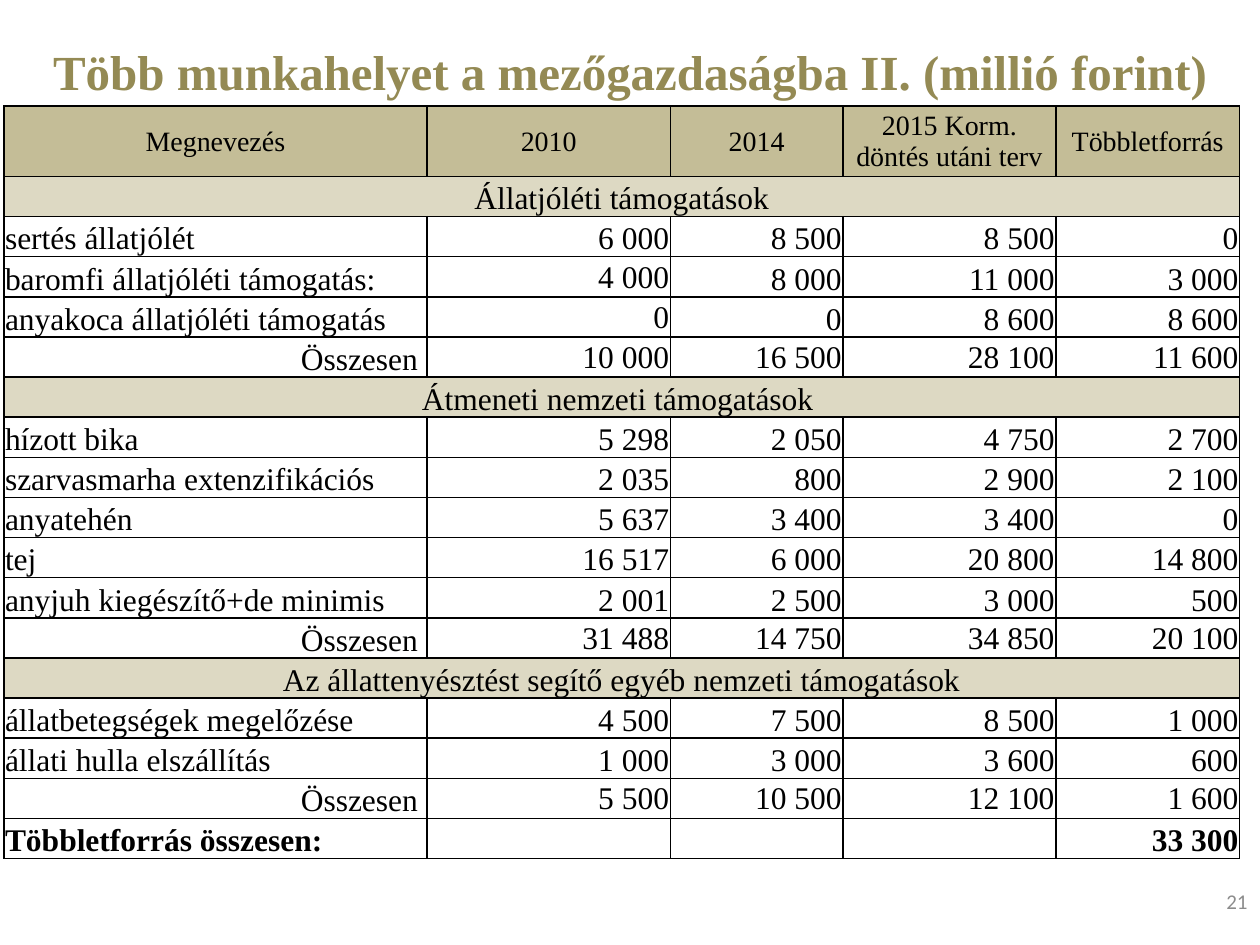
from lxml import etree
from pptx import Presentation
from pptx import util as u
from pptx.dml.color import RGBColor
from pptx.enum import text
from pptx.oxml.ns import qn

THEME = {
    "serif": "Times New Roman", "sans": "Calibri",
    "title": "948A54", "header": "C4BD97", "section": "DDD9C3",
    "ink": "000000", "muted": "8C8C8C",
    "title_size": 28, "header_size": 16, "body_size": 18, "number_size": 12,
    "border": 1,
}
LEFT, CENTER, RIGHT = text.PP_ALIGN.LEFT, text.PP_ALIGN.CENTER, text.PP_ALIGN.RIGHT
MIDDLE, BOTTOM = text.MSO_ANCHOR.MIDDLE, text.MSO_ANCHOR.BOTTOM

TITLE = "Több munkahelyet a mezőgazdaságba II. (millió forint)"
PAGE_NUMBER = "21"
HEADINGS = ["Megnevezés", "2010", "2014", "2015 Korm. döntés utáni terv", "Többletforrás"]
TOTAL = "Összesen "
SECTIONS = [
    ("Állatjóléti támogatások", [
        ("sertés állatjólét", "6 000", "8 500", "8 500", "0"),
        ("baromfi állatjóléti támogatás:", "4 000", "8 000", "11 000", "3 000"),
        ("anyakoca állatjóléti támogatás", "0", "0", "8 600", "8 600"),
        (TOTAL, "10 000", "16 500", "28 100", "11 600"),
    ]),
    ("Átmeneti nemzeti támogatások ", [
        ("hízott bika", "5 298", "2 050", "4 750", "2 700"),
        ("szarvasmarha extenzifikációs", "2 035", "800", "2 900", "2 100"),
        ("anyatehén", "5 637", "3 400", "3 400", "0"),
        ("tej", "16 517", "6 000", "20 800", "14 800"),
        ("anyjuh kiegészítő+de minimis", "2 001", "2 500", "3 000", "500"),
        (TOTAL, "31 488", "14 750", "34 850", "20 100"),
    ]),
    ("Az állattenyésztést segítő egyéb nemzeti támogatások", [
        ("állatbetegségek megelőzése", "4 500", "7 500", "8 500", "1 000"),
        ("állati hulla elszállítás", "1 000", "3 000", "3 600", "600"),
        (TOTAL, "5 500", "10 500", "12 100", "1 600"),
    ]),
]
GRAND_TOTAL = ("Többletforrás összesen:", "", "", "", "33 300")
RAISED_2010 = {"baromfi állatjóléti támogatás:", "anyakoca állatjóléti támogatás"}

COLUMN_WIDTHS = [3.36, 1.93, 1.37, 1.69, 1.46]
TABLE_LEFT, TABLE_TOP, TABLE_HEIGHT, HEADER_HEIGHT = 0.03, 0.84, 5.98, 0.56


def write(frame, words, align, size, color=THEME["ink"], font=THEME["serif"], bold=False):
    line = frame.paragraphs[0]
    line.alignment = align
    run = line.add_run()
    run.text = words
    run.font.name, run.font.size, run.font.bold = font, u.Pt(size), bold
    run.font.color.rgb = RGBColor.from_string(color)


def style_cell(cell, fill):
    cell.margin_left = cell.margin_top = cell.margin_right = u.Inches(0.01)
    cell.margin_bottom = 0
    properties = cell._tc.get_or_add_tcPr()
    for side in ("a:lnL", "a:lnR", "a:lnT", "a:lnB"):
        border = etree.SubElement(properties, qn(side), w=str(u.Pt(THEME["border"])))
        paint = etree.SubElement(border, qn("a:solidFill"))
        etree.SubElement(paint, qn("a:srgbClr"), val=THEME["ink"])
    if fill:
        cell.fill.solid()
        cell.fill.fore_color.rgb = RGBColor.from_string(fill)
    else:
        cell.fill.background()


def fill_row(cells, words, size=THEME["body_size"], fill=None, bold=False):
    label = words[0]
    for column, (cell, entry) in enumerate(zip(cells, words)):
        style_cell(cell, fill)
        raised = column > 0 and label == TOTAL or column == 1 and label in RAISED_2010
        cell.vertical_anchor = MIDDLE if fill == THEME["header"] or raised else BOTTOM
        align = CENTER if fill else LEFT if column == 0 and label != TOTAL else RIGHT
        if entry:
            write(cell.text_frame, entry, align, size, bold=bold)


def add_support_table(slide):
    row_count = 2 + sum(1 + len(items) for _, items in SECTIONS)
    table = slide.shapes.add_table(
        row_count, len(HEADINGS), u.Inches(TABLE_LEFT), u.Inches(TABLE_TOP),
        u.Inches(sum(COLUMN_WIDTHS)), u.Inches(TABLE_HEIGHT)).table
    table.first_row = table.horz_banding = False
    for column, width in zip(table.columns, COLUMN_WIDTHS):
        column.width = u.Inches(width)
    body_height = (TABLE_HEIGHT - HEADER_HEIGHT) / (row_count - 1)
    for index, row in enumerate(table.rows):
        row.height = u.Inches(body_height if index else HEADER_HEIGHT)

    rows = iter(table.rows)
    fill_row(next(rows).cells, HEADINGS, THEME["header_size"], THEME["header"])
    for heading, items in SECTIONS:
        cells = list(next(rows).cells)
        cells[0].merge(cells[-1])
        fill_row(cells, [heading] + [""] * (len(cells) - 1), fill=THEME["section"])
        for item in items:
            fill_row(next(rows).cells, item)
    fill_row(next(rows).cells, GRAND_TOTAL, bold=True)


def main():
    deck = Presentation()
    deck.slide_width, deck.slide_height = u.Inches(10), u.Inches(7.5)
    slide = deck.slides.add_slide(deck.slide_layouts[5])

    title = slide.shapes.title
    title.left, title.top = u.Inches(0), u.Inches(0.29)
    title.width, title.height = u.Inches(10), u.Inches(0.55)
    title.text_frame.vertical_anchor = MIDDLE
    write(title.text_frame, TITLE, CENTER, THEME["title_size"], THEME["title"], bold=True)

    number = slide.shapes.add_textbox(
        u.Inches(7.67), u.Inches(6.95), u.Inches(2.33), u.Inches(0.4)).text_frame
    number.word_wrap = True
    number.vertical_anchor = MIDDLE
    write(number, PAGE_NUMBER, RIGHT, THEME["number_size"], THEME["muted"], THEME["sans"])

    add_support_table(slide)
    deck.save("out.pptx")


if __name__ == "__main__":
    main()
